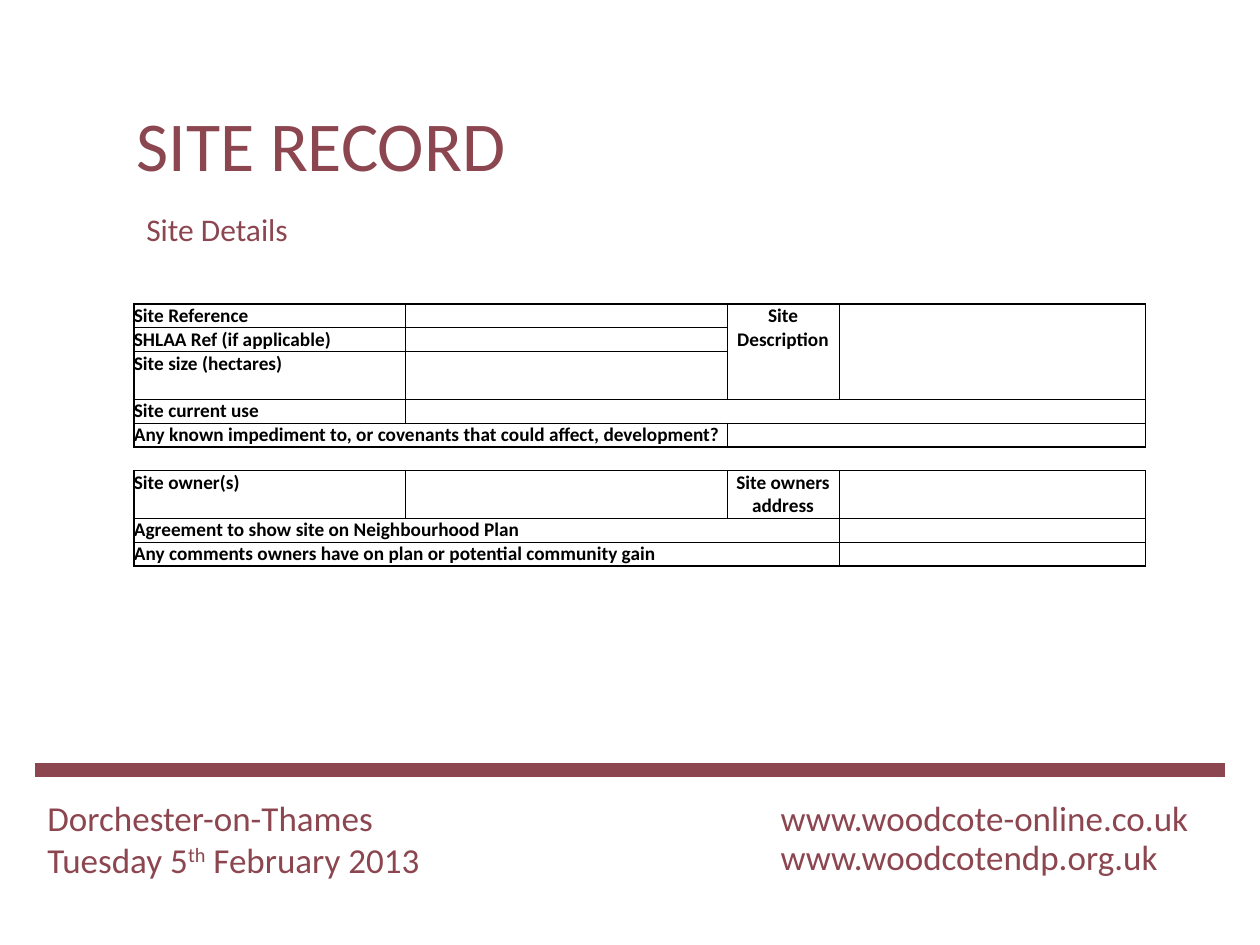
from lxml import etree
from pptx import Presentation
from pptx.dml.color import RGBColor
from pptx.enum.shapes import MSO_CONNECTOR
from pptx.enum.text import MSO_AUTO_SIZE, PP_ALIGN
from pptx.oxml.ns import qn
from pptx.util import Pt

STRAIGHT = MSO_CONNECTOR.STRAIGHT
FIT_SHAPE = MSO_AUTO_SIZE.SHAPE_TO_FIT_TEXT
LEFT, CENTER = PP_ALIGN.LEFT, PP_ALIGN.CENTER

FONT = "Calibri"
COLORS = {"maroon": "8C4650", "black": "000000"}
THICK, THIN = 1, 0.5
TABLE_SIZE = 11

COL_WIDTHS = [5, 150, 184, 64, 175]
LINE = 13.6
ROW_LINES = [1, 1, 2, 1, 1, 1, 2, 1, 1]
GAP_ROW = 5
BLOCK_TOPS, BLOCK_BOTTOMS = {0, 6}, {4, 8}

# first row, first column, last row, last column, text, alignment
AREAS = [
    (0, 0, 0, 1, "Site Reference", LEFT),
    (0, 2, 0, 2, "", LEFT),
    (0, 3, 2, 3, "Site Description", CENTER),
    (0, 4, 2, 4, "", LEFT),
    (1, 0, 1, 1, "SHLAA Ref (if applicable)", LEFT),
    (1, 2, 1, 2, "", LEFT),
    (2, 0, 2, 1, "Site size (hectares)", LEFT),
    (2, 2, 2, 2, "", LEFT),
    (3, 0, 3, 1, "Site current use", LEFT),
    (3, 2, 3, 4, "", LEFT),
    (4, 0, 4, 2, "Any known impediment to, or covenants that could affect, development?", LEFT),
    (4, 3, 4, 4, "", LEFT),
    (6, 0, 6, 1, "Site owner(s)", LEFT),
    (6, 2, 6, 2, "", LEFT),
    (6, 3, 6, 3, "Site owners address", CENTER),
    (6, 4, 6, 4, "", LEFT),
    (7, 0, 7, 3, "Agreement to show site on Neighbourhood Plan", LEFT),
    (7, 4, 7, 4, "", LEFT),
    (8, 0, 8, 3, "Any comments owners have on plan or potential community gain", LEFT),
    (8, 4, 8, 4, "", LEFT),
]


class Deck:
    def __init__(self, prs):
        self.s = prs.slides.add_slide(prs.slide_layouts[6])

    def run(self, p, text, size, color, bold=False, baseline=None):
        r = p.add_run()
        r.text = text
        r.font.name, r.font.size, r.font.bold = FONT, Pt(size), bold
        r.font.color.rgb = RGBColor.from_string(COLORS[color])
        if baseline:
            r.font._element.set("baseline", str(baseline * 1000))

    def text(self, x, y, w, h, size, *lines):
        """Each line is a list of (text, baseline shift in percent)."""
        tf = self.s.shapes.add_textbox(Pt(x), Pt(y), Pt(w), Pt(h)).text_frame
        tf.word_wrap, tf.auto_size = True, FIT_SHAPE
        for i, line in enumerate(lines):
            p = tf.add_paragraph() if i else tf.paragraphs[0]
            for text, baseline in line:
                self.run(p, text, size, "maroon", baseline=baseline)

    def rule(self, x1, x2, y, width):
        line = self.s.shapes.add_connector(STRAIGHT, Pt(x1), Pt(y), Pt(x2), Pt(y))
        line.line.width = Pt(width)
        line.line.color.rgb = RGBColor.from_string(COLORS["maroon"])
        etree.SubElement(line._element.spPr, qn("a:effectLst"))

    def borders(self, cell, widths):
        """Widths run left, right, top, bottom; zero hides the edge."""
        tc_pr = cell._tc.get_or_add_tcPr()
        for side, width in zip("LRTB", widths):
            ln = etree.SubElement(tc_pr, qn(f"a:ln{side}"), w=str(Pt(width)))
            if width:
                fill = etree.SubElement(ln, qn("a:solidFill"))
                etree.SubElement(fill, qn("a:srgbClr"), val=COLORS["black"])
            else:
                etree.SubElement(ln, qn("a:noFill"))
        cell.fill.background()

    def clear_cell(self, cell):
        """Zero margins and a small empty line, so that rows stay low."""
        cell.margin_left = cell.margin_right = cell.margin_top = cell.margin_bottom = 0
        p = cell.text_frame.paragraphs[0]
        etree.SubElement(p._p, qn("a:endParaRPr"), sz=str(TABLE_SIZE * 100))

    def table(self, x, y):
        heights = [LINE * n for n in ROW_LINES]
        table = self.s.shapes.add_table(
            len(heights), len(COL_WIDTHS), Pt(x), Pt(y),
            Pt(sum(COL_WIDTHS)), Pt(sum(heights))).table
        table.first_row = table.horz_banding = False
        for col, width in zip(table.columns, COL_WIDTHS):
            col.width = Pt(width)
        for row, height in zip(table.rows, heights):
            row.height = Pt(height)
        for cell in table.iter_cells():
            self.clear_cell(cell)

        last_col = len(COL_WIDTHS) - 1
        for r0, c0, r1, c1, text, align in AREAS:
            widths = [THICK if outer else THIN for outer in (
                c0 == 0, c1 == last_col, r0 in BLOCK_TOPS, r1 in BLOCK_BOTTOMS)]
            for row in range(r0, r1 + 1):
                for col in range(c0, c1 + 1):
                    self.borders(table.cell(row, col), widths)
            cell = table.cell(r0, c0)
            if (r0, c0) != (r1, c1):
                cell.merge(table.cell(r1, c1))
            if text:
                p = cell.text_frame.paragraphs[0]
                p.alignment = align
                self.run(p, text, TABLE_SIZE, "black", bold=True)
        for col in range(last_col + 1):
            self.borders(table.cell(GAP_ROW, col), (0, 0, THICK, THICK))


def main():
    prs = Presentation()
    prs.slide_width, prs.slide_height = Pt(720), Pt(540)
    deck = Deck(prs)
    deck.table(76.5, 173.7)
    deck.rule(20, 700, 440, 8)
    deck.text(439, 474, 278, 31.5, 20, [("www.woodcotendp.org.uk", None)])
    deck.text(439, 451.5, 256, 31.5, 20, [("www.woodcote-online.co.uk", None)])
    deck.text(70.8, 54.7, 351, 55.7, 40, [("SITE RECORD", None)])
    deck.text(76.5, 116.6, 176, 29, 18, [("Site Details", None)])
    deck.text(20, 451.5, 266, 55.7, 20,
              [("Dorchester-on-Thames", None)],
              [("Tuesday 5", None), ("th", 30), (" February 2013", None)])
    prs.save("out.pptx")


if __name__ == "__main__":
    main()
